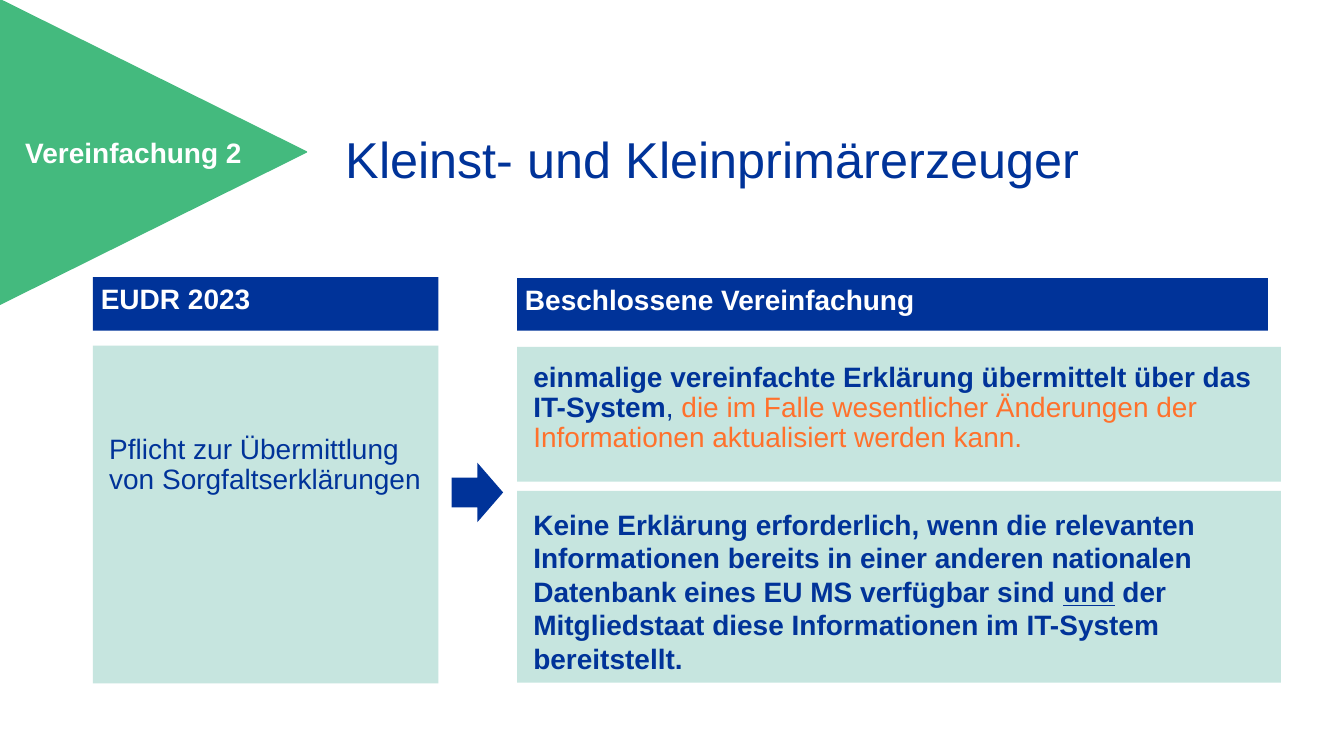
from dataclasses import dataclass
from typing import Any, Optional

from lxml.etree import SubElement
from pptx import Presentation
from pptx.dml.color import RGBColor
from pptx.enum.shapes import MSO_SHAPE
from pptx.enum.text import MSO_ANCHOR, MSO_AUTO_SIZE, PP_ALIGN
from pptx.oxml.ns import qn
from pptx.util import Cm, Pt

BLUE = RGBColor(0x00, 0x33, 0x99)
MINT = RGBColor(0xC6, 0xE5, 0xDF)
GREEN = RGBColor(0x44, 0xBA, 0x7E)
ORANGE = RGBColor(0xFF, 0x71, 0x2C)
WHITE = RGBColor(0xFF, 0xFF, 0xFF)

HEADER_INSET = 0.2
PANEL_INSET = 0.41
LEFT_X, RIGHT_X = 2.34, 13.03
LEFT_WIDTH, RIGHT_WIDTH = 8.71, 19.25


@dataclass(frozen=True)
class Area:
    left: float
    top: float
    width: float
    height: float


@dataclass(frozen=True)
class Phrase:
    text: str
    color: RGBColor = BLUE
    bold: bool = False
    underline: bool = False
    size: float = 20


@dataclass(frozen=True)
class Panel:
    area: Area
    fill: RGBColor
    phrases: tuple[Phrase, ...]
    inset: float = PANEL_INSET
    top_inset: Optional[float] = None
    line_spacing: float = 0.9
    placeholder: Optional[int] = None


PANELS = (
    Panel(Area(LEFT_X, 6.98, LEFT_WIDTH, 1.35), BLUE,
          (Phrase("EUDR 2023", WHITE, bold=True),), HEADER_INSET, placeholder=1),
    Panel(Area(LEFT_X, 8.71, LEFT_WIDTH, 8.51), MINT,
          (Phrase("Pflicht zur Übermittlung von Sorgfaltserklärungen"),),
          top_inset=2.26, placeholder=2),
    Panel(Area(RIGHT_X, 7.01, 18.92, 1.32), BLUE,
          (Phrase("Beschlossene Vereinfachung", WHITE, bold=True),),
          HEADER_INSET, placeholder=3),
    Panel(Area(RIGHT_X, 8.74, RIGHT_WIDTH, 3.4), MINT,
          (Phrase("einmalige vereinfachte Erklärung übermittelt über das IT-System",
                  bold=True),
           Phrase(", "),
           Phrase("die im Falle wesentlicher Änderungen der Informationen "
                  "aktualisiert werden kann.", ORANGE)),
          placeholder=4),
    Panel(Area(RIGHT_X, 12.37, RIGHT_WIDTH, 4.83), MINT,
          (Phrase("Keine Erklärung erforderlich, wenn die relevanten Informationen "
                  "bereits in einer anderen nationalen Datenbank eines EU MS "
                  "verfügbar sind ", bold=True),
           Phrase("und", bold=True, underline=True),
           Phrase(" der Mitgliedstaat diese Informationen im IT-System bereitstellt.",
                  bold=True)),
          line_spacing=1.0),
)


def set_all(target: Any, values: dict[str, Any]) -> None:
    for name, value in values.items():
        setattr(target, name, value)


def frame(area: Area) -> dict[str, Any]:
    return {"left": Cm(area.left), "top": Cm(area.top),
            "width": Cm(area.width), "height": Cm(area.height)}


def write(shape: Any, phrases: tuple[Phrase, ...], line_spacing: float = 1.0,
          align: PP_ALIGN = PP_ALIGN.LEFT, **frame_values: Any) -> None:
    """Fill the shape with one unbulleted paragraph of formatted phrases."""
    set_all(shape.text_frame, {"word_wrap": True, "auto_size": MSO_AUTO_SIZE.NONE,
                               "vertical_anchor": MSO_ANCHOR.TOP, **frame_values})
    paragraph = shape.text_frame.paragraphs[0]
    properties = paragraph._p.get_or_add_pPr()
    properties.set("marL", "0")
    properties.set("indent", "0")
    SubElement(properties, qn("a:buNone"))
    set_all(paragraph, {"alignment": align, "line_spacing": line_spacing,
                        "space_before": Pt(0)})
    for phrase in phrases:
        run = paragraph.add_run()
        run.text = phrase.text
        set_all(run.font, {"name": "Arial", "size": Pt(phrase.size),
                           "bold": phrase.bold, "underline": phrase.underline})
        run.font.color.rgb = phrase.color


def add_solid(slide: Any, kind: MSO_SHAPE, area: Area, color: RGBColor) -> Any:
    shape = slide.shapes.add_shape(kind, **frame(area))
    shape.shadow.inherit = False
    shape.fill.solid()
    shape.fill.fore_color.rgb = color
    shape.line.fill.background()
    return shape


def draw_panel(slide: Any, panel: Panel) -> None:
    if panel.placeholder is None:
        shape = add_solid(slide, MSO_SHAPE.RECTANGLE, panel.area, panel.fill)
    else:
        shape = slide.placeholders[panel.placeholder]
        set_all(shape, frame(panel.area))
        shape.fill.solid()
        shape.fill.fore_color.rgb = panel.fill
    inset = Cm(panel.inset)
    top_inset = inset if panel.top_inset is None else Cm(panel.top_inset)
    write(shape, panel.phrases, panel.line_spacing, margin_left=inset,
          margin_right=inset, margin_top=top_inset, margin_bottom=inset)


def main() -> None:
    presentation = Presentation()
    set_all(presentation, {"slide_width": Cm(33.87), "slide_height": Cm(19.05)})
    comparison_layout = presentation.slide_layouts[4]
    slide = presentation.slides.add_slide(comparison_layout)

    for panel in PANELS:
        draw_panel(slide, panel)

    add_solid(slide, MSO_SHAPE.RIGHT_ARROW, Area(11.38, 11.66, 1.3, 1.5), BLUE)

    corner = add_solid(slide, MSO_SHAPE.ISOSCELES_TRIANGLE,
                       Area(0.03, -0.03, 7.67, 7.72), GREEN)
    corner.rotation = 90
    corner.line.color.rgb = GREEN
    corner.line.width = Pt(1)

    corner_label = slide.shapes.add_textbox(**frame(Area(0, 3.3, 6.73, 1.96)))
    write(corner_label, (Phrase("Vereinfachung 2", WHITE, bold=True),),
          align=PP_ALIGN.CENTER)

    title = slide.shapes.title
    set_all(title, frame(Area(8.46, 2.92, 23.9, 2.31)))
    write(title, (Phrase("Kleinst- und Kleinprimärerzeuger", size=36),),
          line_spacing=0.9, vertical_anchor=MSO_ANCHOR.MIDDLE)

    presentation.save("out.pptx")


if __name__ == "__main__":
    main()
